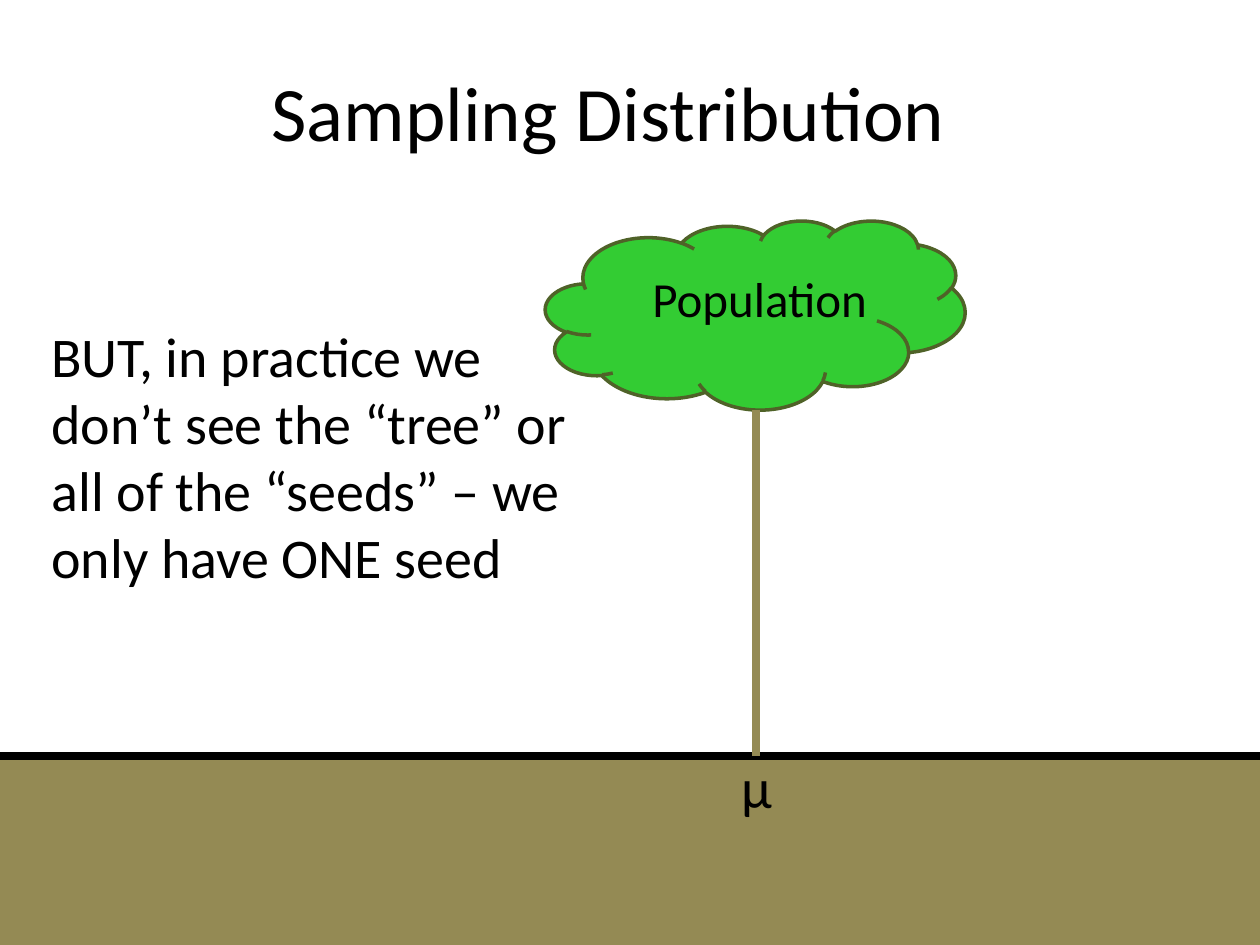
from lxml import etree
from pptx import Presentation
from pptx.dml.color import RGBColor
from pptx.enum.shapes import MSO_CONNECTOR, MSO_SHAPE
from pptx.enum.text import MSO_ANCHOR, PP_ALIGN
from pptx.oxml.ns import qn
from pptx.util import Inches, Pt

RECTANGLE, CLOUD = MSO_SHAPE.RECTANGLE, MSO_SHAPE.CLOUD
STRAIGHT = MSO_CONNECTOR.STRAIGHT
TOP, MIDDLE = MSO_ANCHOR.TOP, MSO_ANCHOR.MIDDLE
LEFT, CENTER = PP_ALIGN.LEFT, PP_ALIGN.CENTER

FONT = "Calibri"
BLACK, SOIL, LEAF, LEAF_EDGE = "000000", "948A54", "33CC33", "4F6228"
WIDTH, HEIGHT = 10, 7.5
GROUND_Y = 6
TRUNK_X, TRUNK_TOP = 6, 3.25
LINE_WEIGHT = 4.5

TITLE = ("Sampling Distribution", (0.33, 0.25, 9, 1.25), 44, CENTER, MIDDLE)
LABELS = [
    ("Population", (5.08, 2.08, 2, 0.57), 28, LEFT, TOP),
    ("µ", (5.79, 5.92, 0.58, 0.64), 32, LEFT, TOP),
    ("BUT, in practice we don’t see the “tree” or all of the “seeds” – we only have ONE seed",
     (0.31, 2.5, 4.42, 2.26), 32, LEFT, TOP),
]


def color(value):
    return RGBColor.from_string(value)


def add_filled(page, kind, place, fill, edge=None):
    shape = page.shapes.add_shape(kind, *map(Inches, place))
    shape.shadow.inherit = False
    shape.fill.solid()
    shape.fill.fore_color.rgb = color(fill)
    if edge:
        shape.line.color.rgb = color(edge)
        shape.line.width = Pt(2)
    else:
        shape.line.fill.background()


def add_line(page, start, end, stroke):
    line = page.shapes.add_connector(STRAIGHT, *map(Inches, start + end))
    line.line.color.rgb = color(stroke)
    line.line.width = Pt(LINE_WEIGHT)
    etree.SubElement(line._element.spPr, qn("a:effectLst"))


def add_text(page, text, place, size, align, anchor):
    box = page.shapes.add_textbox(*map(Inches, place))
    frame = box.text_frame
    frame.word_wrap = True
    frame.vertical_anchor = anchor
    para = frame.paragraphs[0]
    para.alignment = align
    span = para.add_run()
    span.text = text
    span.font.name = FONT
    span.font.size = Pt(size)
    span.font.color.rgb = color(BLACK)


def main():
    deck = Presentation()
    deck.slide_width, deck.slide_height = Inches(WIDTH), Inches(HEIGHT)
    page = deck.slides.add_slide(deck.slide_layouts[6])

    add_filled(page, RECTANGLE, (0, GROUND_Y, WIDTH, HEIGHT - GROUND_Y), SOIL)
    add_text(page, *TITLE)
    add_line(page, (0, GROUND_Y), (WIDTH, GROUND_Y), BLACK)
    add_filled(page, CLOUD, (4.33, 1.75, 3.33, 1.5), LEAF, LEAF_EDGE)
    add_line(page, (TRUNK_X, TRUNK_TOP), (TRUNK_X, GROUND_Y), SOIL)
    for label in LABELS:
        add_text(page, *label)

    deck.save("out.pptx")


if __name__ == "__main__":
    main()
